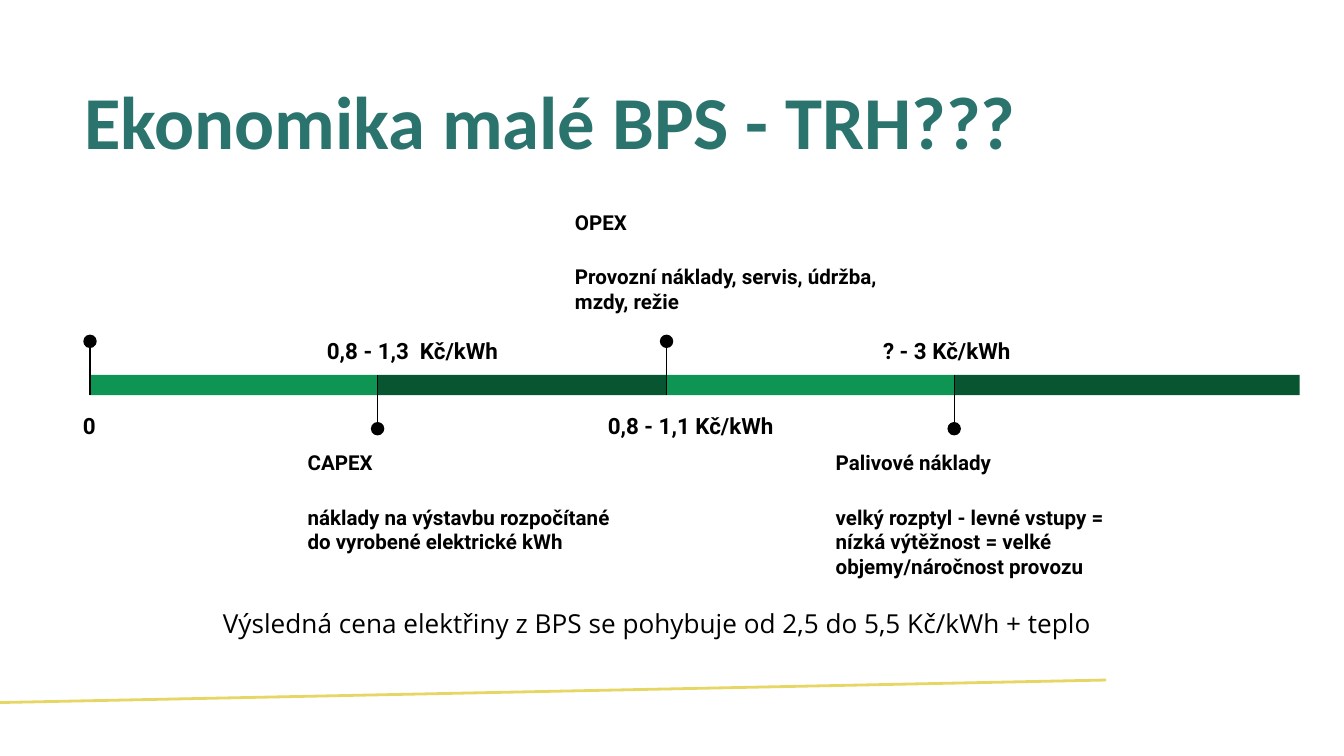
from dataclasses import dataclass
from typing import Optional

from pptx import Presentation
from pptx.dml.color import RGBColor
from pptx.enum.shapes import MSO_CONNECTOR, MSO_SHAPE
from pptx.enum.text import PP_ALIGN
from pptx.oxml.ns import qn
from pptx.slide import Slide
from pptx.text.text import _Paragraph
from pptx.util import Emu, Pt

EMU_PER_PX = 9144  # 100 px to the inch
SLIDE_WIDTH = 1000

WHITE = RGBColor(0xFF, 0xFF, 0xFF)
BLACK = RGBColor(0x00, 0x00, 0x00)
TEAL = RGBColor(0x2B, 0x74, 0x6E)
YELLOW = RGBColor(0xE6, 0xD7, 0x64)
LIGHT_GREEN = RGBColor(0x0E, 0x94, 0x53)
DARK_GREEN = RGBColor(0x08, 0x56, 0x31)

BAR_TOP, BAR_HEIGHT = 279, 15
BAR_BOTTOM = BAR_TOP + BAR_HEIGHT
TICK_REACH = 25
DOT_SIZE = 10
VALUE_HEIGHT = 41
DETAIL_WIDTH, DETAIL_HEIGHT = 246, 103


@dataclass(frozen=True)
class Box:
    left: int
    top: int
    width: int
    height: int


@dataclass(frozen=True)
class TextStyle:
    font: str
    size: int
    color: RGBColor = BLACK
    bold: bool = True


@dataclass(frozen=True)
class Detail:
    left: int
    heading: str
    body: str


@dataclass(frozen=True)
class Milestone:
    start: int
    end: int
    color: RGBColor
    points_up: bool
    value: str
    value_left: int
    value_width: int
    detail: Optional[Detail] = None


TITLE_STYLE = TextStyle("Calibri", 40, TEAL)
VALUE_STYLE = TextStyle("Roboto", 12)
DETAIL_STYLE = TextStyle("Roboto", 11)
SUMMARY_STYLE = TextStyle("Open Sans", 14, bold=False)

MILESTONES = [
    Milestone(67, 281, LIGHT_GREEN, True, "0", 19, 95),
    Milestone(281, 496, DARK_GREEN, False, "0,8 - 1,3  Kč/kWh", 212, 190,
              Detail(219, "CAPEX",
                     "náklady na výstavbu rozpočítané do vyrobené elektrické kWh")),
    Milestone(496, 710, LIGHT_GREEN, True, "0,8 - 1,1 Kč/kWh", 434, 160,
              Detail(418, "OPEX",
                     "Provozní náklady, servis, údržba, mzdy, režie")),
    Milestone(710, 967, DARK_GREEN, False, "? - 3 Kč/kWh", 644, 121,
              Detail(612, "Palivové náklady",
                     "velký rozptyl - levné vstupy = nízká výtěžnost = velké "
                     "objemy/náročnost provozu")),
]


def px(length: int) -> Emu:
    return Emu(length * EMU_PER_PX)


def add_filled(slide: Slide, preset: MSO_SHAPE, box: Box, color: RGBColor) -> None:
    shape = slide.shapes.add_shape(
        preset, px(box.left), px(box.top), px(box.width), px(box.height))
    shape.shadow.inherit = False
    shape.fill.solid()
    shape.fill.fore_color.rgb = color
    shape.line.fill.background()


def add_line(slide: Slide, start: tuple[int, int], end: tuple[int, int],
             color: RGBColor, weight: float) -> None:
    line = slide.shapes.add_connector(
        MSO_CONNECTOR.STRAIGHT, px(start[0]), px(start[1]), px(end[0]), px(end[1]))
    line.line.color.rgb = color
    line.line.width = Pt(weight)
    properties = line._element.spPr
    properties.append(properties.makeelement(qn("a:effectLst"), {}))


def add_text(slide: Slide, box: Box, lines: list[str],
             style: TextStyle) -> list[_Paragraph]:
    """Add a text box with one paragraph per line and return the paragraphs."""
    frame = slide.shapes.add_textbox(
        px(box.left), px(box.top), px(box.width), px(box.height)).text_frame
    frame.word_wrap = True
    frame.margin_left = frame.margin_right = px(10)
    frame.margin_top = frame.margin_bottom = px(10)
    frame.text = "\n".join(lines)
    for paragraph in frame.paragraphs:
        for run in paragraph.runs:
            run.font.name = style.font
            run.font.size = Pt(style.size)
            run.font.bold = style.bold
            run.font.color.rgb = style.color
    return list(frame.paragraphs)


def add_milestone(slide: Slide, milestone: Milestone) -> None:
    """Draw a bar segment, its pin, and the value on the side opposite the pin."""
    start = milestone.start
    add_filled(slide, MSO_SHAPE.RECTANGLE,
               Box(start, BAR_TOP, milestone.end - start, BAR_HEIGHT), milestone.color)

    if milestone.points_up:
        pin_end, bar_edge = BAR_TOP - TICK_REACH, BAR_BOTTOM
        value_top, detail_top = BAR_BOTTOM, 146
    else:
        pin_end, bar_edge = BAR_BOTTOM + TICK_REACH, BAR_TOP
        value_top, detail_top = BAR_TOP - VALUE_HEIGHT, 325

    add_line(slide, (start, pin_end), (start, bar_edge), BLACK, 0.75)
    radius = DOT_SIZE // 2
    add_filled(slide, MSO_SHAPE.OVAL,
               Box(start - radius, pin_end - radius, DOT_SIZE, DOT_SIZE), BLACK)

    value_box = Box(milestone.value_left, value_top, milestone.value_width, VALUE_HEIGHT)
    [value] = add_text(slide, value_box, [milestone.value], VALUE_STYLE)
    value.alignment = PP_ALIGN.CENTER
    value.line_spacing = 1.15
    value.space_after = Pt(16)

    detail = milestone.detail
    if detail:
        detail_box = Box(detail.left, detail_top, DETAIL_WIDTH, DETAIL_HEIGHT)
        _, body = add_text(slide, detail_box, [detail.heading, detail.body], DETAIL_STYLE)
        body.space_before = body.space_after = Pt(16)


def main() -> None:
    presentation = Presentation()
    presentation.slide_width = px(SLIDE_WIDTH)
    presentation.slide_height = Emu(px(SLIDE_WIDTH) * 9 // 16)
    slide = presentation.slides.add_slide(presentation.slide_layouts[6])
    slide.background.fill.solid()
    slide.background.fill.fore_color.rgb = WHITE

    add_line(slide, (-12, 523), (823, 506), YELLOW, 1.5)
    add_text(slide, Box(53, 46, 827, 127), ["Ekonomika malé BPS - TRH???"], TITLE_STYLE)
    for milestone in MILESTONES:
        add_milestone(slide, milestone)
    add_text(slide, Box(156, 442, 688, 39),
             ["Výsledná cena elektřiny z BPS se pohybuje od 2,5 do 5,5 Kč/kWh + teplo"],
             SUMMARY_STYLE)

    presentation.save("out.pptx")


if __name__ == "__main__":
    main()
